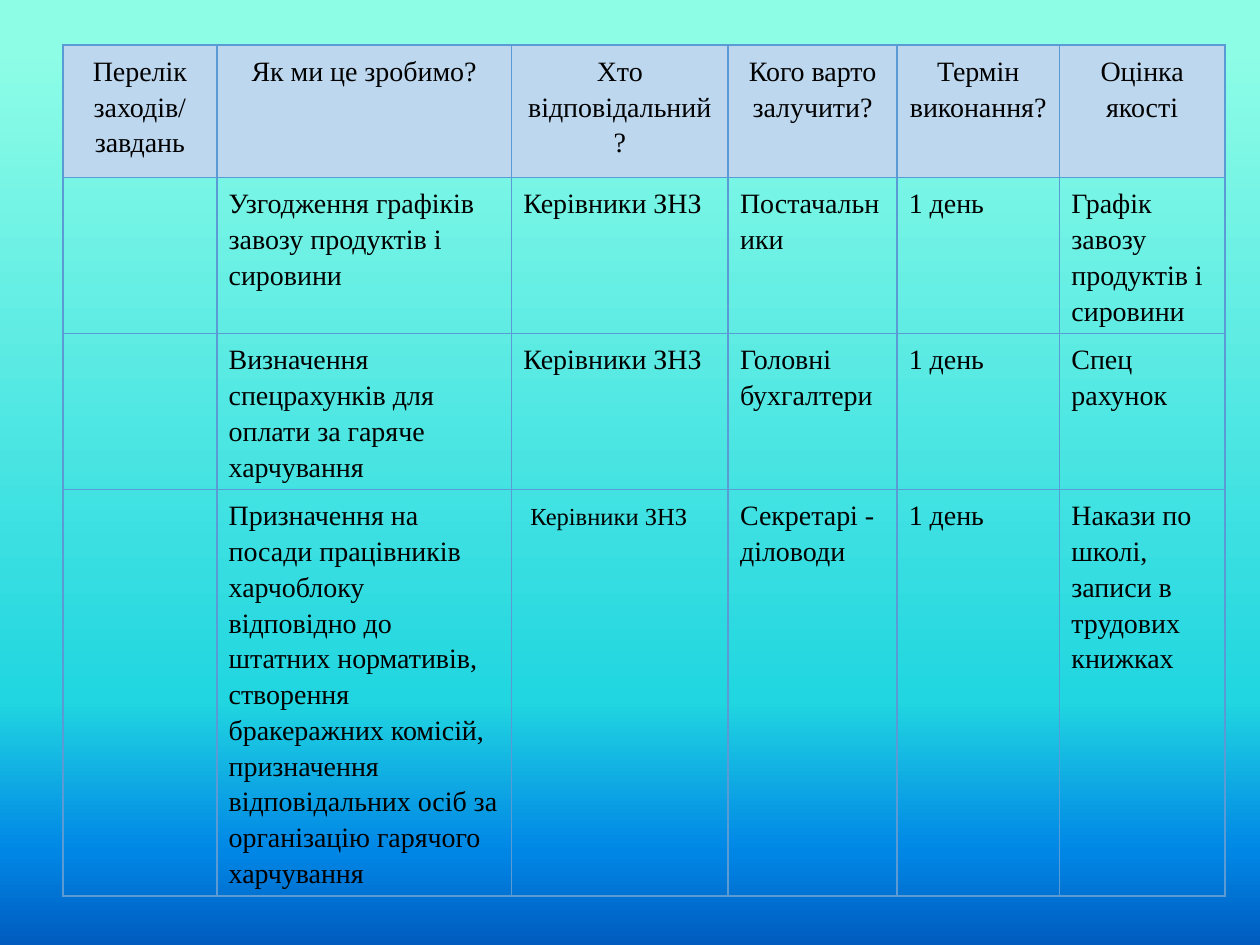
from dataclasses import dataclass

from lxml.etree import SubElement
from pptx import Presentation
from pptx.dml.color import RGBColor
from pptx.enum.text import PP_ALIGN
from pptx.oxml.ns import qn
from pptx.slide import Slide
from pptx.table import _Cell
from pptx.util import Cm, Pt

COLORS = {"text": "000000", "head": "BDD7EE", "line": "5B9BD5"}
STOPS = {5: "8EFDE6", 74: "21D6E0", 90: "0087E6", 100: "005CBF"}
FONT = "Times New Roman"
WIDTHS = [3.1, 5.94, 4.37, 3.4, 3.28, 3.33]
HEIGHTS = [2.67, 1.96, 1.98, 6.6]


@dataclass
class Entry:
    text: str = ""
    size: int = 16
    lead: str = ""


BOSS = Entry("Керівники ЗНЗ")
TERM = Entry("1 день")
ROWS = [
    [Entry("Перелік заходів/ завдань"), Entry("Як ми це зробимо?"),
     Entry("Хто відповідальний?"), Entry("Кого варто залучити?"),
     Entry("Термін виконання?"), Entry("Оцінка якості")],
    [Entry(), Entry("Узгодження графіків завозу продуктів і сировини"),
     BOSS, Entry("Постачальники"), TERM,
     Entry("Графік завозу продуктів і сировини")],
    [Entry(), Entry("Визначення спецрахунків для оплати за гаряче харчування"),
     BOSS, Entry("Головні бухгалтери"), TERM, Entry("Спец рахунок")],
    [Entry(), Entry("Призначення на посади працівників харчоблоку відповідно "
                    "до штатних нормативів, створення бракеражних комісій, "
                    "призначення відповідальних осіб за організацію гарячого "
                    "харчування"),
     Entry("Керівники ЗНЗ", 14, " "), Entry("Секретарі - діловоди"), TERM,
     Entry("Накази по школі, записи в трудових книжках")],
]


def paint_back(slide: Slide) -> None:
    slide.background.fill.gradient()
    grad = next(slide.element.iter(qn("a:gradFill")))
    for child in list(grad):
        grad.remove(child)
    stops = SubElement(grad, qn("a:gsLst"))
    for place, color in STOPS.items():
        stop = SubElement(stops, qn("a:gs"), pos=str(place * 1000))
        SubElement(stop, qn("a:srgbClr"), val=color)
    SubElement(grad, qn("a:lin"), ang="5400000", scaled="0")


def add_border(cell: _Cell) -> None:
    props = cell._tc.get_or_add_tcPr()
    for side in "LRTB":
        line = SubElement(props, qn(f"a:ln{side}"), w=str(Pt(1)))
        fill = SubElement(line, qn("a:solidFill"))
        SubElement(fill, qn("a:srgbClr"), val=COLORS["line"])


def fill_cell(cell: _Cell, entry: Entry, head: bool) -> None:
    add_border(cell)
    if head:
        cell.fill.solid()
        cell.fill.fore_color.rgb = RGBColor.from_string(COLORS["head"])
    else:
        cell.fill.background()
    cell.margin_left = cell.margin_right = Cm(0.24)
    cell.margin_top = cell.margin_bottom = Cm(0.13)
    para = cell.text_frame.paragraphs[0]
    para.alignment = PP_ALIGN.CENTER if head else PP_ALIGN.LEFT
    para.line_spacing = 1.15
    para.space_after = Pt(10)
    for text, size in ((entry.lead, 16), (entry.text, entry.size)):
        if text:
            run = para.add_run()
            run.text = text
            run.font.name = FONT
            run.font.size = Pt(size)
            run.font.color.rgb = RGBColor.from_string(COLORS["text"])


def add_plan(slide: Slide) -> None:
    frame = slide.shapes.add_table(len(ROWS), len(WIDTHS), Cm(1.27), Cm(0.91),
                                   Cm(sum(WIDTHS)), Cm(sum(HEIGHTS)))
    table = frame.table
    table.first_row = table.horz_banding = False
    for col, width in zip(table.columns, WIDTHS):
        col.width = Cm(width)
    for row, height in zip(table.rows, HEIGHTS):
        row.height = Cm(height)
    for r, entries in enumerate(ROWS):
        for c, entry in enumerate(entries):
            fill_cell(table.cell(r, c), entry, r == 0)
    frame.height = Cm(18.21)


def main() -> None:
    deck = Presentation()
    deck.slide_width, deck.slide_height = Cm(25.4), Cm(19.05)
    slide = deck.slides.add_slide(deck.slide_layouts[6])
    paint_back(slide)
    add_plan(slide)
    deck.save("out.pptx")


if __name__ == "__main__":
    main()
